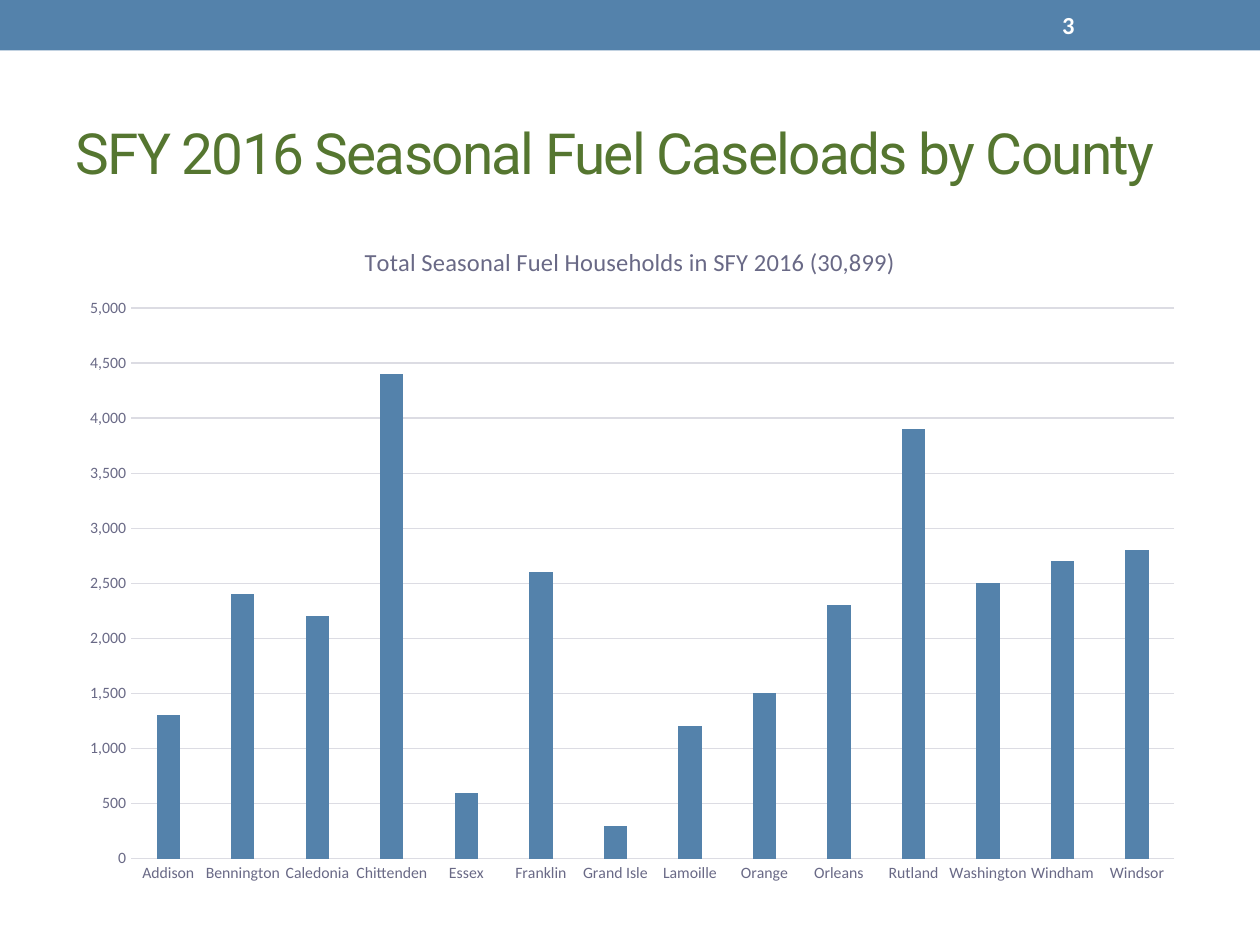
"""Build the slide on seasonal fuel caseloads by county."""
import pptx
import pptx.chart.data
import pptx.dml.color
import pptx.enum.chart
import pptx.enum.shapes
import pptx.enum.text
import pptx.oxml
import pptx.oxml.ns
import pptx.util

Cm = pptx.util.Cm
Pt = pptx.util.Pt
COLOURS = {"blue": "5482AB", "green": "557630", "white": "FFFFFF",
           "text": "292934", "label": "696986", "line": "DCDCE3"}
CASELOADS = {"Addison": 1300, "Bennington": 2400, "Caledonia": 2200, "Chittenden": 4400,
             "Essex": 600, "Franklin": 2600, "Grand Isle": 300, "Lamoille": 1200,
             "Orange": 1500, "Orleans": 2300, "Rutland": 3900, "Washington": 2500,
             "Windham": 2700, "Windsor": 2800}


def colour(name):
    return pptx.dml.color.RGBColor.from_string(COLOURS[name])


def style_font(font, colour_name, **values):
    for name, value in values.items():
        setattr(font, name, value)
    font.color.rgb = colour(colour_name)


deck = pptx.Presentation()
deck.slide_width, deck.slide_height = Cm(25.4), Cm(19.05)
page = deck.slides.add_slide(deck.slide_layouts[5])

band = page.shapes.add_shape(pptx.enum.shapes.MSO_SHAPE.RECTANGLE, 0, 0, Cm(25.4), Cm(1.02))
band.shadow.inherit = False
band.fill.solid()
band.fill.fore_color.rgb = colour("blue")
band.line.fill.background()

title = page.shapes.title
number = page.shapes.add_textbox(Cm(21.16), Cm(0.05), Cm(2.97), Cm(0.91))
texts = [
    (title, "SFY 2016 Seasonal Fuel Caseloads by County", "green",
     {"name": "Roboto", "size": Pt(32.4), "bold": False}),
    (number, "3", "white", {"name": "Calibri", "size": Pt(14), "bold": True}),
]
for box, words, colour_name, values in texts:
    frame = box.text_frame
    frame.word_wrap = True
    frame.auto_size = pptx.enum.text.MSO_AUTO_SIZE.NONE
    frame.vertical_anchor = pptx.enum.text.MSO_ANCHOR.MIDDLE
    para = frame.paragraphs[0]
    para.alignment = pptx.enum.text.PP_ALIGN.LEFT
    span = para.add_run()
    span.text = words
    style_font(span.font, colour_name, **values)

title_place = {"left": Cm(1.27), "top": Cm(1.7), "width": Cm(22.86), "height": Cm(2.74)}
for name, value in title_place.items():
    setattr(title, name, value)
title.text_frame.paragraphs[0].runs[0].font._element.set("spc", "-100")

data = pptx.chart.data.CategoryChartData(number_format="#,##0")
data.categories = list(CASELOADS)
data.add_series("Series 1", list(CASELOADS.values()))
chart = page.shapes.add_chart(pptx.enum.chart.XL_CHART_TYPE.COLUMN_CLUSTERED,
                              Cm(1.27), Cm(4.45), Cm(22.86), Cm(13.54), data).chart
chart.has_legend = False
style_font(chart.font, "text", name="Calibri", size=Pt(10))
chart.has_title = True
heading = chart.chart_title.text_frame
heading.text = "Total Seasonal Fuel Households in SFY 2016 (30,899)"
style_font(heading.paragraphs[0].runs[0].font, "label",
           name="Calibri", size=Pt(14), bold=False)
chart.chart_title.include_in_layout = False

plot = chart.plots[0]
plot.gap_width, plot.overlap, plot.vary_by_categories = 219, -27, False
bars = plot.series[0].format.fill
bars.solid()
bars.fore_color.rgb = colour("blue")

categories, values = chart.category_axis, chart.value_axis
for axis in (categories, values):
    axis.major_tick_mark = axis.minor_tick_mark = pptx.enum.chart.XL_TICK_MARK.NONE
    style_font(axis.tick_labels.font, "label", name="Calibri", size=Pt(9))
for line in (categories.format.line, values.major_gridlines.format.line):
    line.color.rgb = colour("line")
    line.width = Pt(0.75)
values.format.line.fill.background()
values.minimum_scale, values.maximum_scale, values.major_unit = 0, 5000, 500
values.tick_labels.number_format = "#,##0"
values.tick_labels.number_format_is_linked = False

area = plot._element.getparent()
for old in area.findall(pptx.oxml.ns.qn("c:layout")):
    area.remove(old)
parts = {"layoutTarget": "inner", "xMode": "edge", "yMode": "edge",
         "x": 0.06, "y": 0.13, "w": 0.92, "h": 0.82}
layout = "".join(f'<c:{name} val="{value}"/>' for name, value in parts.items())
area.insert(0, pptx.oxml.parse_xml(
    f'<c:layout {pptx.oxml.ns.nsdecls("c")}><c:manualLayout>{layout}</c:manualLayout></c:layout>'))

deck.save("out.pptx")
